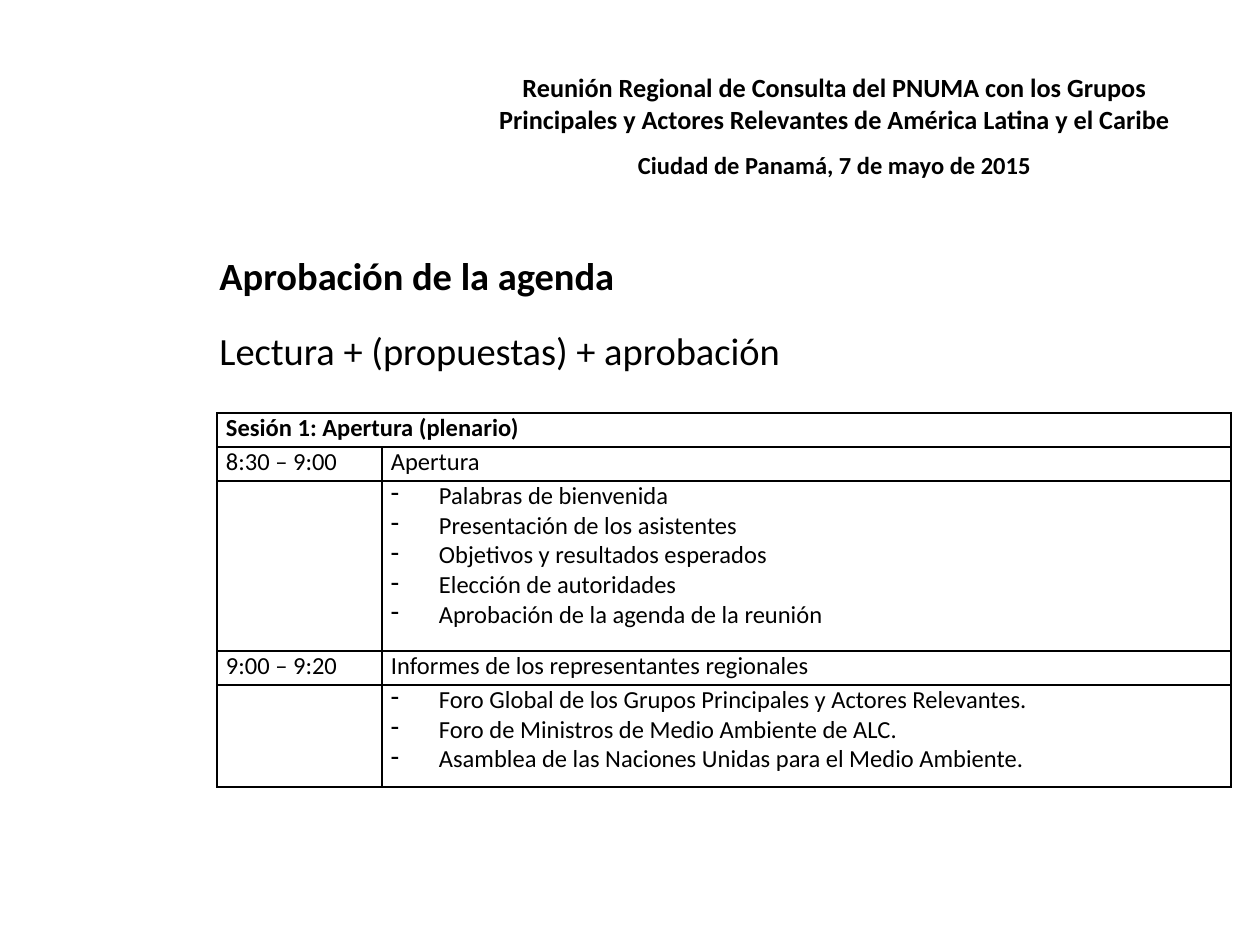
from lxml.etree import SubElement
from pptx import Presentation
from pptx.dml.color import RGBColor
from pptx.enum.text import MSO_ANCHOR, PP_ALIGN
from pptx.oxml.ns import qn
from pptx.util import Emu, Pt

BLACK = RGBColor(0, 0, 0)
FONT = "Calibri"
SCALE = 914400 / 126

MEETING = ("Reunión Regional de Consulta del PNUMA con los Grupos "
           "Principales y Actores Relevantes de América Latina y el Caribe")
DATE = "Ciudad de Panamá, 7 de mayo de 2015"
HEADING = "Aprobación de la agenda"
STEPS = "Lectura + (propuestas) + aprobación"
SESSION = "Sesión 1: Apertura (plenario)"
AGENDA = [
    ("8:30 – 9:00", "Apertura", [
        "Palabras de bienvenida",
        "Presentación de los asistentes",
        "Objetivos y resultados esperados",
        "Elección de autoridades",
        "Aprobación de la agenda de la reunión",
    ]),
    ("9:00 – 9:20", "Informes de los representantes regionales", [
        "Foro Global de los Grupos Principales y Actores Relevantes.",
        "Foro de Ministros de Medio Ambiente de ALC.",
        "Asamblea de las Naciones Unidas para el Medio Ambiente.",
    ]),
]
COLUMNS = [165, 849]
ROW = 34


def px(length):
    return Emu(round(length * SCALE))


def write(frame, lines, size, align, bold=False):
    for index, line in enumerate(lines):
        paragraph = frame.paragraphs[0] if index == 0 else frame.add_paragraph()
        paragraph.text = line
        paragraph.alignment = align
        for run in paragraph.runs:
            run.font.name = FONT
            run.font.size = Pt(size)
            run.font.bold = bold
            run.font.color.rgb = BLACK


def add_text(slide, box, lines, size, align, bold, anchor):
    frame = slide.shapes.add_textbox(*map(px, box)).text_frame
    frame.word_wrap = True
    frame.vertical_anchor = anchor
    write(frame, lines, size, align, bold)
    return frame


def add_dashes(frame):
    for paragraph in frame.paragraphs:
        properties = paragraph._p.get_or_add_pPr()
        properties.set("marL", str(px(48)))
        properties.set("indent", str(px(-48)))
        SubElement(properties, qn("a:buChar"), char="-")


def format_cell(cell):
    cell.margin_left = cell.margin_right = px(9)
    cell.margin_top = cell.margin_bottom = 0
    properties = cell._tc.get_or_add_tcPr()
    for side in ("lnL", "lnR", "lnT", "lnB"):
        border = SubElement(properties, qn(f"a:{side}"), w=str(Pt(1)))
        fill = SubElement(border, qn("a:solidFill"))
        SubElement(fill, qn("a:srgbClr"), val=str(BLACK))
    cell.fill.background()


def add_agenda(slide):
    rows = [(SESSION, [""])]
    for time, topic, points in AGENDA:
        rows += [(time, [topic]), ("", points)]
    heights = [ROW * len(right) for _, right in rows]
    table = slide.shapes.add_table(
        len(rows), len(COLUMNS),
        *map(px, (217, 413, sum(COLUMNS), sum(heights)))).table
    table.first_row = table.horz_banding = False
    for column, width in zip(table.columns, COLUMNS):
        column.width = px(width)
    for index, (left, right) in enumerate(rows):
        table.rows[index].height = px(heights[index])
        label, detail = table.cell(index, 0), table.cell(index, 1)
        for cell, lines in ((label, [left]), (detail, right)):
            format_cell(cell)
            write(cell.text_frame, lines, 14, PP_ALIGN.JUSTIFY, bold=index == 0)
        if index and not left:
            add_dashes(detail.text_frame)
    table.cell(0, 0).merge(table.cell(0, 1))


def main():
    deck = Presentation()
    deck.slide_width, deck.slide_height = px(1260), px(945)
    slide = deck.slides.add_slide(deck.slide_layouts[6])

    add_text(slide, (472, 49, 725, 108), [MEETING], 15,
             PP_ALIGN.CENTER, True, MSO_ANCHOR.MIDDLE)

    body = add_text(slide, (207, 246, 990, 598), [HEADING, STEPS], 22,
                    PP_ALIGN.LEFT, False, MSO_ANCHOR.TOP)
    heading, steps = body.paragraphs
    heading.runs[0].font.bold = True
    heading.space_after = Pt(12)
    steps.space_before = Pt(4.4)

    date = add_text(slide, (472, 98, 725, 118), [DATE], 14,
                    PP_ALIGN.CENTER, True, MSO_ANCHOR.MIDDLE)
    date.paragraphs[0].line_spacing = 1.5

    add_agenda(slide)
    deck.save("out.pptx")


if __name__ == "__main__":
    main()
